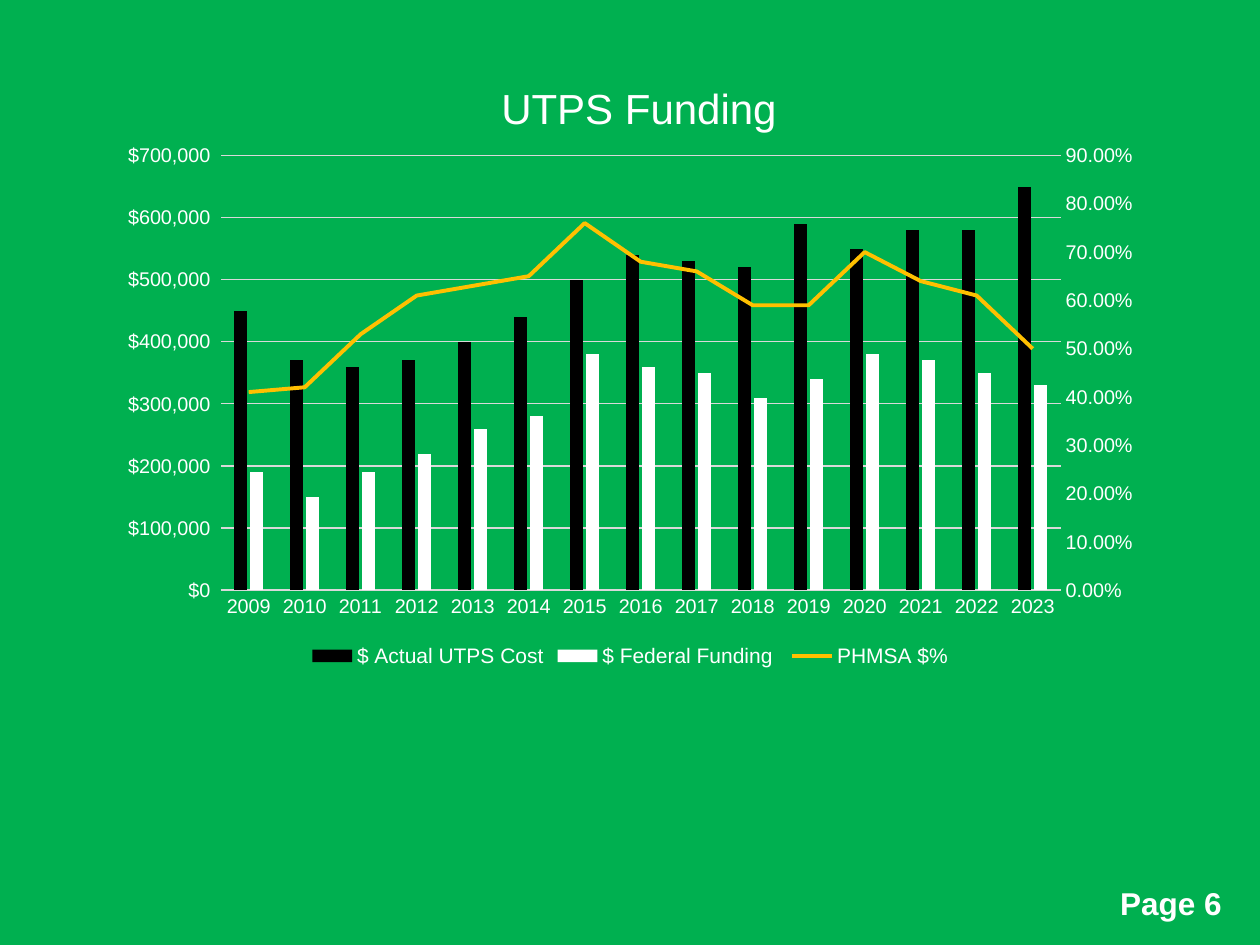
from copy import deepcopy
from dataclasses import dataclass

from lxml.etree import SubElement
from pptx import Presentation
from pptx.chart.axis import CategoryAxis, ValueAxis
from pptx.chart.data import CategoryChartData
from pptx.dml.color import RGBColor
from pptx.enum.chart import XL_CHART_TYPE, XL_LEGEND_POSITION, XL_TICK_MARK
from pptx.enum.text import MSO_AUTO_SIZE
from pptx.oxml import parse_xml
from pptx.oxml.ns import nsdecls, qn
from pptx.util import Cm, Pt


@dataclass(frozen=True)
class Theme:
    font: str = "Arial"
    background: str = "00B050"
    text: str = "FFFFFF"
    grid: str = "D9D9D9"
    cost: str = "000000"
    funding: str = "FFFFFF"
    share: str = "FFC000"
    title_size: float = 24
    page_size: float = 18
    legend_size: float = 12
    axis_size: float = 11.3
    grid_width: float = 0.75
    share_width: float = 2.25


DOLLARS = '"$"#,##0_);[Red]\\("$"#,##0\\)'
PERCENT = "0.00%"
YEARS = [str(year) for year in range(2009, 2024)]
COST = [450, 370, 360, 370, 400, 440, 500, 540, 530, 520, 590, 550, 580, 580, 650]
FUNDING = [190, 150, 190, 220, 260, 280, 380, 360, 350, 310, 340, 380, 370, 350, 330]
SHARE = [0.41, 0.42, 0.53, 0.61, 0.63, 0.65, 0.76, 0.68, 0.66, 0.59, 0.59, 0.7,
         0.64, 0.61, 0.5]


class SlideBuilder:
    def __init__(self, prs, theme):
        self.theme = theme
        self.s = prs.slides.add_slide(prs.slide_layouts[6])
        fill = self.s.background.fill
        fill.solid()
        fill.fore_color.rgb = RGBColor.from_string(theme.background)

    def format_font(self, font, size, bold=False):
        values = {"name": self.theme.font, "size": Pt(size), "bold": bold}
        for name, value in values.items():
            setattr(font, name, value)
        font.color.rgb = RGBColor.from_string(self.theme.text)

    def format_line(self, line, color, width):
        line.color.rgb = RGBColor.from_string(color)
        line.width = Pt(width)

    def add_text(self, text, left, top, width, height):
        sp = self.s.shapes.add_textbox(Cm(left), Cm(top), Cm(width), Cm(height))
        tf = sp.text_frame
        for name, value in {"word_wrap": False, "auto_size": MSO_AUTO_SIZE.SHAPE_TO_FIT_TEXT}.items():
            setattr(tf, name, value)
        r = tf.paragraphs[0].add_run()
        r.text = text
        self.format_font(r.font, self.theme.page_size, True)

    def add_funding_chart(self, title, left, top, width, height):
        data = CategoryChartData()
        data.categories = YEARS
        data.add_series("$ Actual UTPS Cost", [v * 1000 for v in COST], DOLLARS)
        data.add_series("$ Federal Funding ", [v * 1000 for v in FUNDING], DOLLARS)
        data.add_series("PHMSA $%", SHARE, PERCENT)
        chart = self.s.shapes.add_chart(
            XL_CHART_TYPE.COLUMN_CLUSTERED, Cm(left), Cm(top), Cm(width), Cm(height), data
        ).chart
        self.format_font(chart.font, 10)
        self.format_columns(chart)
        self.format_axes(chart)
        self.add_share_line(chart)
        self.format_title(chart, title)
        self.format_legend(chart)
        self.set_layout(chart.plots[0]._element.getparent(), 0.11, 0.18, 0.8, 0.69)

    def format_columns(self, chart):
        plot = chart.plots[0]
        for name, value in {"gap_width": 219, "overlap": -27, "vary_by_categories": False}.items():
            setattr(plot, name, value)
        for series, color in zip(plot.series, (self.theme.cost, self.theme.funding)):
            series.format.fill.solid()
            series.format.fill.fore_color.rgb = RGBColor.from_string(color)

    def format_axes(self, chart):
        for axis in (chart.category_axis, chart.value_axis):
            axis.major_tick_mark = axis.minor_tick_mark = XL_TICK_MARK.NONE
            self.format_font(axis.tick_labels.font, self.theme.axis_size)
        self.format_line(chart.category_axis.format.line, self.theme.grid, self.theme.grid_width)
        axis = chart.value_axis
        axis.format.line.fill.background()
        self.format_line(axis.major_gridlines.format.line, self.theme.grid, self.theme.grid_width)
        self.scale_axis(axis, 700000, 100000, DOLLARS)

    def scale_axis(self, axis, maximum, step, number_format):
        for name, value in {"minimum_scale": 0, "maximum_scale": maximum, "major_unit": step}.items():
            setattr(axis, name, value)
        axis.tick_labels.number_format = number_format
        axis.tick_labels.number_format_is_linked = False

    def add_share_line(self, chart):
        bars = chart.plots[0]._element
        share = bars.findall(qn("c:ser"))[-1]
        invert = share.find(qn("c:invertIfNegative"))
        if invert is not None:
            share.remove(invert)
        line = parse_xml(
            f'<c:lineChart {nsdecls("c")}><c:grouping val="standard"/><c:varyColors val="0"/>'
            '<c:marker val="1"/><c:axId val="5001"/><c:axId val="5002"/></c:lineChart>'
        )
        line.insert(2, share)
        bars.addnext(line)
        series = chart.plots[1].series[0]
        series.smooth = False
        series.marker.style = None
        marker = series.marker.format
        marker.fill.background()
        share.find(qn("c:marker")).clear()
        SubElement(share.find(qn("c:marker")), qn("c:symbol")).set("val", "none")
        self.format_line(series.format.line, self.theme.share, self.theme.share_width)

        value_el = chart.value_axis._element
        category = deepcopy(chart.category_axis._element)
        value = deepcopy(value_el)
        value_el.addnext(category)
        category.addnext(value)
        for axis, own, other in ((category, "5001", "5002"), (value, "5002", "5001")):
            axis.find(qn("c:axId")).set("val", own)
            axis.find(qn("c:crossAx")).set("val", other)
        value.find(qn("c:axPos")).set("val", "r")
        value.find(qn("c:crosses")).set("val", "max")
        CategoryAxis(category).visible = False
        right = ValueAxis(value)
        right.has_major_gridlines = False
        self.scale_axis(right, 0.9, 0.1, PERCENT)

    def format_title(self, chart, title):
        chart.has_title = True
        p = chart.chart_title.text_frame.paragraphs[0]
        r = p.add_run()
        r.text = title
        self.format_font(r.font, self.theme.title_size)
        self.set_layout(chart.chart_title._element, 0.37, 0.05)

    def format_legend(self, chart):
        chart.has_legend = True
        chart.legend.position = XL_LEGEND_POSITION.BOTTOM
        chart.legend.include_in_layout = False
        self.format_font(chart.legend.font, self.theme.legend_size)

    def set_layout(self, parent, x, y, w=None, h=None):
        old = parent.find(qn("c:layout"))
        if old is not None:
            parent.remove(old)
        target = '<c:layoutTarget val="inner"/>' if w else ""
        modes = '<c:xMode val="edge"/><c:yMode val="edge"/>'
        sizes = "".join(f'<c:{k} val="{v}"/>' for k, v in zip("xywh", (x, y, w, h)) if v)
        layout = parse_xml(
            f'<c:layout {nsdecls("c")}><c:manualLayout>{target}{modes}{sizes}</c:manualLayout></c:layout>'
        )
        tx = parent.find(qn("c:tx"))
        if tx is not None:
            tx.addnext(layout)
        else:
            parent.insert(0, layout)


def main():
    prs = Presentation()
    prs.slide_width, prs.slide_height = Cm(25.4), Cm(19.05)
    slide = SlideBuilder(prs, Theme())
    slide.add_text("Page 6", 22.33, 17.7, 2.97, 1.02)
    slide.add_funding_chart("UTPS Funding", 2.12, 0.85, 21.17, 12.7)
    prs.save("out.pptx")


if __name__ == "__main__":
    main()
